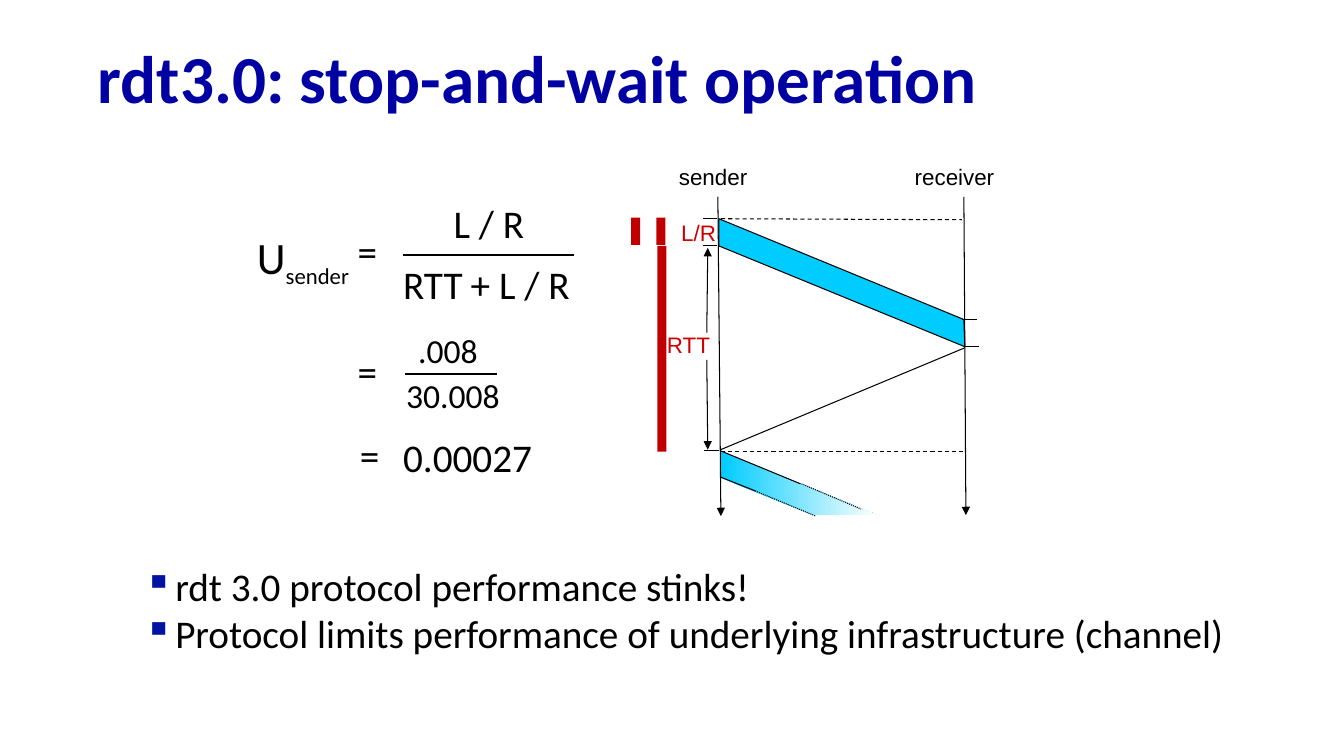
from dataclasses import dataclass

from lxml import etree
from pptx import Presentation
from pptx import util as u
from pptx.dml.color import RGBColor
from pptx.enum import dml, shapes, text
from pptx.oxml.ns import qn

COLOURS = {
    "title": "0000A3",
    "bullet": "0013A3",
    "ink": "000000",
    "paper": "FFFFFF",
    "packet": "00CCFF",
    "label": "CC0000",
    "bar": "C00000",
}
DASH = dml.MSO_LINE.DASH
DOTS = dml.MSO_LINE.ROUND_DOT


@dataclass
class Line:
    x1: float
    y1: float
    x2: float
    y2: float
    dash: dml.MSO_LINE | None = None
    arrow: bool = False
    weight: float = 0.75


@dataclass
class Term:
    """A piece of the utilisation formula."""
    words: str
    left: float
    top: float
    width: float
    size: int = 28


@dataclass
class Label:
    words: str
    left: float
    top: float
    width: float
    colour: str
    filled: bool = False


@dataclass
class Bar:
    left: float
    top: float
    height: float


LABELS = [
    Label("sender", 6.54, 1.57, 0.97, "ink", filled=True),
    Label("receiver", 8.93, 1.57, 1.03, "ink", filled=True),
    Label("RTT", 6.26, 3.24, 0.88, "label"),
    Label("L/R", 6.27, 2.12, 0.93, "label"),
]
FIRST_PACKET = [(7.13, 2.17), (9.56, 3.17), (9.57, 3.44), (7.13, 2.44)]
NEXT_PACKET = [(7.15, 4.48), (8.7, 5.11), (8.07, 5.11), (7.15, 4.74)]
LINES = [
    # Time axes
    Line(7.12, 1.94, 7.15, 5.12, arrow=True),
    Line(9.56, 1.95, 9.58, 5.11, arrow=True),
    # Time levels and acknowledgement
    Line(7.15, 2.17, 9.54, 2.18, DASH),
    Line(7.15, 4.48, 9.55, 4.48, DASH),
    Line(7.15, 4.46, 9.57, 3.45),
    # Ticks
    Line(7.11, 2.17, 6.97, 2.17),
    Line(7.11, 2.44, 6.97, 2.44),
    Line(7.13, 4.47, 6.98, 4.47),
    Line(9.69, 3.17, 9.54, 3.17),
    Line(9.57, 3.44, 9.71, 3.44),
    # Edges of the next packet
    Line(7.14, 4.47, 7.94, 4.8),
    Line(7.95, 4.8, 8.54, 5.05, DOTS),
    Line(7.14, 4.73, 7.49, 4.87),
    Line(7.49, 4.87, 8.09, 5.12, DOTS),
    # Round-trip span
    Line(7.01, 3.57, 7.02, 4.46, arrow=True),
    Line(7.01, 3.3, 7.02, 2.46, arrow=True),
    # Fraction bars
    Line(4, 2.53, 5.69, 2.53, weight=1.75),
    Line(4.02, 3.71, 4.93, 3.71, weight=1.5),
]
BARS = [Bar(6.52, 2.44, 2.04), Bar(6.51, 2.16, 0.27), Bar(6.26, 2.16, 0.27)]
TERMS = [
    Term("=", 3.45, 2.21, 0.4),
    Term("L / R", 4.4, 1.93, 0.91),
    Term("RTT", 3.9, 2.53, 0.8),
    Term("+ L / R", 4.57, 2.53, 1.2),
    Term("=", 3.45, 3.4, 0.4),
    Term(".008", 4.05, 3.22, 0.8, 24),
    Term("30.008", 3.93, 3.67, 1.14, 24),
    Term("=", 3.47, 4.23, 0.4),
    Term("0.00027", 3.9, 4.25, 1.5),
]
CONCLUSIONS = [
    "rdt 3.0 protocol performance stinks!",
    "Protocol limits performance of underlying infrastructure (channel)",
]


def rgb(name: str) -> RGBColor:
    return RGBColor.from_string(COLOURS[name])


def format_run(run, size: int, font: str = "Calibri", colour: str = "ink") -> None:
    run.font.size = u.Pt(size)
    run.font.name = font
    run.font.color.rgb = rgb(colour)


def inches(*lengths: float) -> list[u.Length]:
    return [u.Inches(length) for length in lengths]


def draw_line(slide, line: Line) -> None:
    connector = slide.shapes.add_connector(
        shapes.MSO_CONNECTOR.STRAIGHT, *inches(line.x1, line.y1, line.x2, line.y2))
    connector.line.color.rgb = rgb("ink")
    connector.line.width = u.Pt(line.weight)
    if line.dash is not None:
        connector.line.dash_style = line.dash
    if line.arrow:
        etree.SubElement(connector.line._get_or_add_ln(), qn("a:tailEnd"), type="triangle")
    etree.SubElement(connector._element.spPr, qn("a:effectLst"))


def draw_rectangle(slide, left: float, top: float, width: float, height: float, fill: str):
    shape = slide.shapes.add_shape(
        shapes.MSO_SHAPE.RECTANGLE, *inches(left, top, width, height))
    shape.shadow.inherit = False
    shape.fill.solid()
    shape.fill.fore_color.rgb = rgb(fill)
    shape.line.fill.background()
    return shape


def draw_label(slide, label: Label) -> None:
    box = (label.left, label.top, label.width, 0.38)
    if label.filled:
        shape = draw_rectangle(slide, *box, "paper")
    else:
        shape = slide.shapes.add_textbox(*inches(*box))
    frame = shape.text_frame
    frame.word_wrap = True
    frame.vertical_anchor = text.MSO_ANCHOR.TOP
    frame.text = label.words
    paragraph = frame.paragraphs[0]
    paragraph.alignment = text.PP_ALIGN.RIGHT
    format_run(paragraph.runs[0], 16, "Arial", label.colour)


def draw_packet(slide, corners: list[tuple[float, float]]):
    start, *others = [tuple(inches(*corner)) for corner in corners]
    builder = slide.shapes.build_freeform(*start)
    builder.add_line_segments(others, close=True)
    packet = builder.convert_to_shape()
    packet.shadow.inherit = False
    return packet


def draw_packets(slide) -> None:
    first = draw_packet(slide, FIRST_PACKET)
    first.fill.solid()
    first.fill.fore_color.rgb = rgb("packet")
    first.line.color.rgb = rgb("ink")
    first.line.width = u.Pt(0.75)

    fading = draw_packet(slide, NEXT_PACKET)
    fading.fill.gradient()
    fading.fill.gradient_angle = 0
    for stop, position, colour in zip(
            fading.fill.gradient_stops, (0, 1), ("packet", "paper")):
        stop.position = position
        stop.color.rgb = rgb(colour)
    fading.line.fill.background()


def draw_term(slide, term: Term):
    box = slide.shapes.add_textbox(*inches(term.left, term.top, term.width, 0.57))
    frame = box.text_frame
    frame.word_wrap = False
    frame.auto_size = text.MSO_AUTO_SIZE.SHAPE_TO_FIT_TEXT
    frame.text = term.words
    format_run(frame.paragraphs[0].runs[0], term.size)
    return frame.paragraphs[0]


def draw_conclusions(slide) -> None:
    frame = slide.shapes.add_textbox(*inches(1.33, 5.53, 11.15, 1.35)).text_frame
    frame.word_wrap = True
    frame.text = "\n".join(CONCLUSIONS)
    for paragraph in frame.paragraphs:
        format_run(paragraph.runs[0], 28)
        properties = paragraph._p.get_or_add_pPr()
        indent = u.Inches(0.31)
        properties.set("marL", str(indent))
        properties.set("indent", str(-indent))
        colour = etree.SubElement(properties, qn("a:buClr"))
        etree.SubElement(colour, qn("a:srgbClr"), val=COLOURS["bullet"])
        etree.SubElement(properties, qn("a:buChar"), char="▪")


def set_title(slide) -> None:
    title = slide.shapes.title
    title.left, title.top, title.width, title.height = inches(0.87, 0.32, 12.14, 0.98)
    frame = title.text_frame
    frame.text = "rdt3.0: stop-and-wait operation"
    frame.vertical_anchor = text.MSO_ANCHOR.MIDDLE
    paragraph = frame.paragraphs[0]
    paragraph.alignment = text.PP_ALIGN.LEFT
    paragraph.line_spacing = 0.9
    format_run(paragraph.runs[0], 48, colour="title")
    paragraph.runs[0].font.bold = True


def main() -> None:
    presentation = Presentation()
    presentation.slide_width, presentation.slide_height = inches(13.33, 7.5)
    slide = presentation.slides.add_slide(presentation.slide_layouts[5])
    set_title(slide)
    draw_packets(slide)
    for line in LINES:
        draw_line(slide, line)
    for bar in BARS:
        draw_rectangle(slide, bar.left, bar.top, 0.09, bar.height, "bar")
    for label in LABELS:
        draw_label(slide, label)
    utilisation = draw_term(slide, Term("U", 2.45, 2.23, 1.22, 32))
    subscript = utilisation.add_run()
    subscript.text = "sender"
    format_run(subscript, 28)
    subscript.font._element.set("baseline", "-25000")
    for term in TERMS:
        draw_term(slide, term)
    draw_conclusions(slide)
    presentation.save("out.pptx")


if __name__ == "__main__":
    main()
